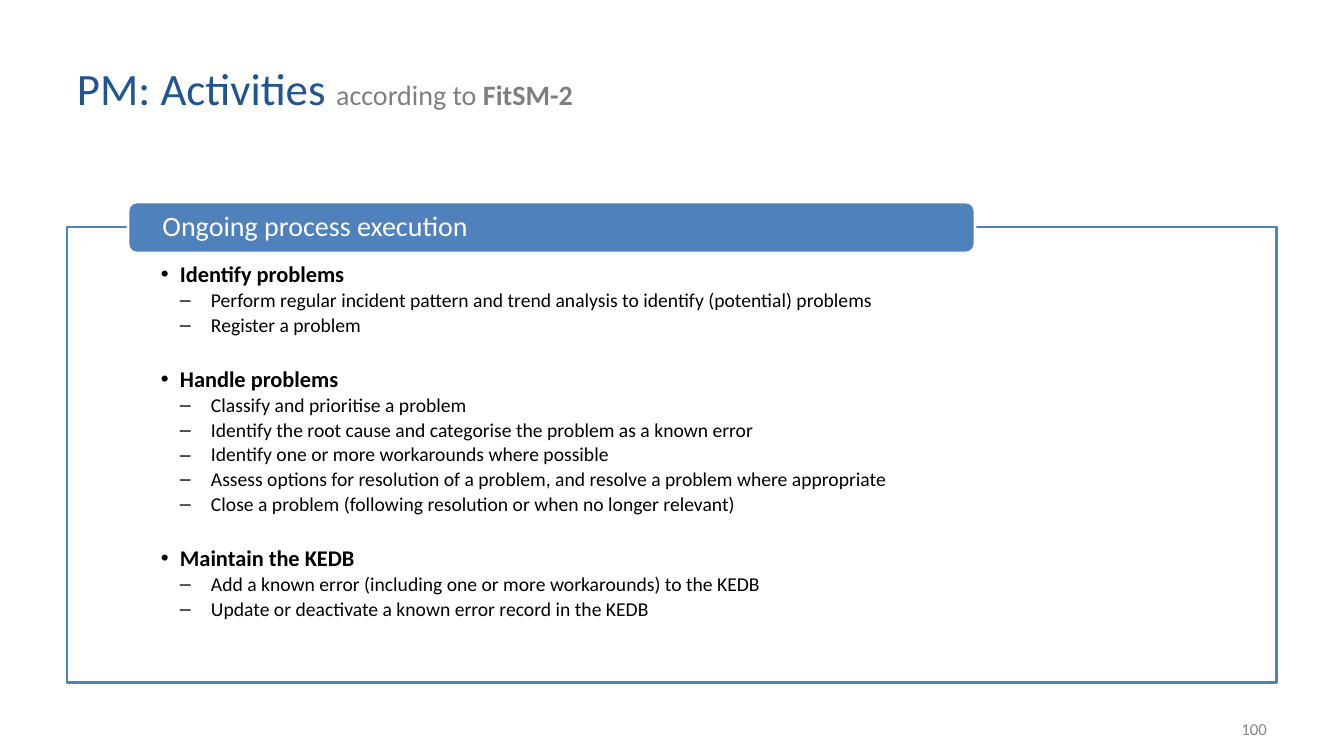
from dataclasses import dataclass

from lxml import etree
from pptx import Presentation
from pptx import util as u
from pptx.dml.color import RGBColor
from pptx.enum import shapes, text
from pptx.oxml import ns

PX = 914400 / 100.8


@dataclass(frozen=True)
class Theme:
    font: str = "Calibri"
    title: str = "205595"
    muted: str = "7F7F7F"
    number: str = "888888"
    accent: str = "4F81BD"
    white: str = "FFFFFF"
    black: str = "000000"
    title_size: int = 32
    heading_size: int = 20
    topic_size: int = 16
    step_size: int = 14
    number_size: int = 12
    line_width: int = 2


THEME = Theme()

ACTIVITIES = {
    "Identify problems": [
        "Perform regular incident pattern and trend analysis to identify (potential) problems",
        "Register a problem",
    ],
    "Handle problems": [
        "Classify and prioritise a problem",
        "Identify the root cause and categorise the problem as a known error",
        "Identify one or more workarounds where possible",
        "Assess options for resolution of a problem, and resolve a problem where appropriate",
        "Close a problem (following resolution or when no longer relevant)",
    ],
    "Maintain the KEDB": [
        "Add a known error (including one or more workarounds) to the KEDB",
        "Update or deactivate a known error record in the KEDB",
    ],
}


def px(length):
    return u.Emu(round(length * PX))


def color(value):
    return RGBColor.from_string(value)


def add_span(para, words, size, fill, bold=False):
    span = para.add_run()
    span.text = words
    span.font.name = THEME.font
    span.font.size = u.Pt(size)
    span.font.bold = bold
    span.font.color.rgb = color(fill)


def set_frame(shape, insets=(10, 5, 10, 5), anchor=text.MSO_ANCHOR.MIDDLE):
    frame = shape.text_frame
    frame.word_wrap = True
    frame.vertical_anchor = anchor
    frame.margin_left, frame.margin_top, frame.margin_right, frame.margin_bottom = map(px, insets)
    frame.paragraphs[0].alignment = text.PP_ALIGN.LEFT
    return frame


def add_box(page, kind, box, fill, line):
    shape = page.shapes.add_shape(kind, *map(px, box))
    shape.shadow.inherit = False
    shape.fill.solid()
    shape.fill.fore_color.rgb = color(fill)
    shape.line.color.rgb = color(line)
    shape.line.width = u.Pt(THEME.line_width)
    return shape


def set_bullet(para, symbol, left, hanging):
    properties = para._p.get_or_add_pPr()
    properties.set("marL", str(px(left)))
    properties.set("indent", str(px(-hanging)))
    bullet_color = etree.SubElement(properties, ns.qn("a:buClr"))
    etree.SubElement(bullet_color, ns.qn("a:srgbClr"), val=THEME.black)
    etree.SubElement(properties, ns.qn("a:buFont"), typeface="Arial")
    etree.SubElement(properties, ns.qn("a:buChar"), char=symbol)


def add_item(frame, words, level, symbol, left, hanging, before, size, bold=False):
    first = not frame.paragraphs[0].runs
    para = frame.paragraphs[0] if first else frame.add_paragraph()
    para.alignment = text.PP_ALIGN.LEFT
    para.level = level
    set_bullet(para, symbol, left, hanging)
    para.line_spacing = 0.9
    para.space_before = u.Pt(0 if first else before)
    add_span(para, words, size, THEME.black, bold)


def add_title(page, box):
    para = set_frame(page.shapes.add_textbox(*map(px, box))).paragraphs[0]
    add_span(para, "PM: Activities ", THEME.title_size, THEME.title)
    add_span(para, "according to ", THEME.heading_size, THEME.muted)
    add_span(para, "FitSM-2", THEME.heading_size, THEME.muted, bold=True)


def add_panel(page, box, heading, activities):
    left, top, width, height = box
    panel = add_box(page, shapes.MSO_SHAPE.RECTANGLE, box, THEME.white, THEME.accent)
    frame = set_frame(panel, (94, 36, 94, 12), text.MSO_ANCHOR.TOP)
    for topic, steps in activities.items():
        add_item(frame, topic, 1, "•", left=19, hanging=19, before=22.4,
                 size=THEME.topic_size, bold=True)
        for step in steps:
            add_item(frame, step, 2, "–", left=50, hanging=31, before=2.5,
                     size=THEME.step_size)

    banner_height = 51
    banner_box = (left + 61, top - banner_height // 2, width * 7 // 10, banner_height)
    banner = add_box(page, shapes.MSO_SHAPE.ROUNDED_RECTANGLE, banner_box,
                     THEME.accent, THEME.white)
    banner.adjustments[0] = 0.17
    para = set_frame(banner, (32, 0, 32, 0)).paragraphs[0]
    para.line_spacing = 0.9
    add_span(para, heading, THEME.heading_size, THEME.white)


def add_page_number(page, box, number):
    para = set_frame(page.shapes.add_textbox(*map(px, box))).paragraphs[0]
    para.alignment = text.PP_ALIGN.RIGHT
    add_span(para, number, THEME.number_size, THEME.number)


def main():
    deck = Presentation()
    deck.slide_width, deck.slide_height = px(1344), px(756)
    page = deck.slides.add_slide(deck.slide_layouts[6])
    add_title(page, (67, 30, 998, 115))
    add_panel(page, (67, 227, 1210, 456), "Ongoing process execution", ACTIVITIES)
    add_page_number(page, (964, 709, 313, 40), "100")
    deck.save("out.pptx")


if __name__ == "__main__":
    main()
